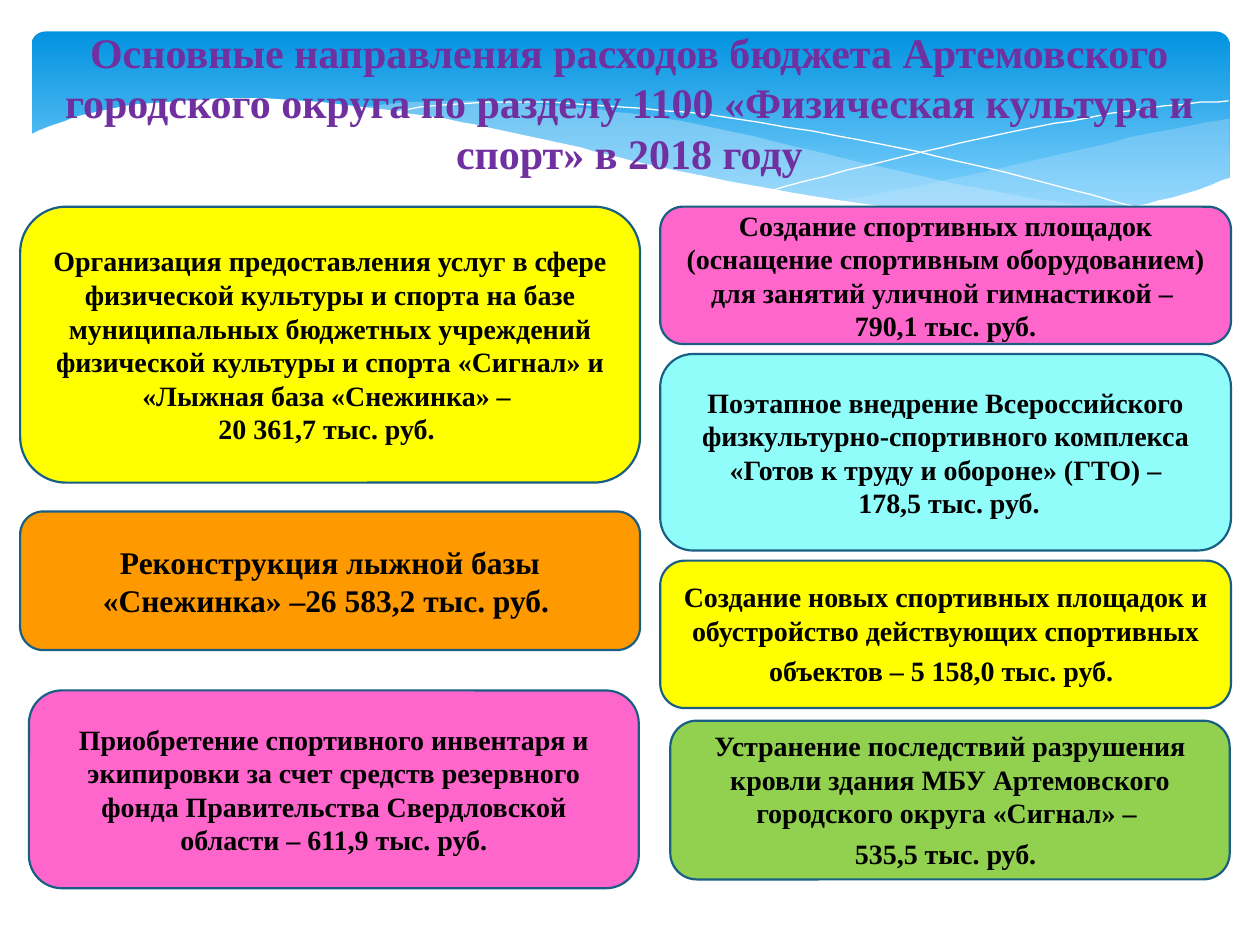
from dataclasses import dataclass

from lxml.etree import SubElement
from pptx import Presentation
from pptx.dml.color import RGBColor
from pptx.enum.shapes import MSO_SHAPE
from pptx.enum.text import MSO_ANCHOR, MSO_AUTO_SIZE, PP_ALIGN
from pptx.oxml.ns import qn
from pptx.util import Cm, Pt

FONT = "Times New Roman"
CM_PER_INCH = 2.54
Point = tuple[float, float]


@dataclass
class Wave:
    """A curved figure; its edges are knots in hundredths of an inch."""
    edges: list[list[Point]]
    fill: str = ""
    opacity: int = 100


@dataclass
class Box:
    left: float
    top: float
    width: float
    height: float
    fill: str
    lines: list[str]
    size: int = 16
    tail_size: int = 0  # size of a closing space, where it sets the line height


WAVES = [
    Wave([[(976, 94), (948, 99), (906, 107), (861, 118), (779, 137), (706, 152), (661, 160)],
          [(661, 160), (705, 165), (757, 170), (803, 172), (854, 170), (897, 165),
           (935, 156), (976, 141)]], "C6E7FC", 29),
    Wave([[(893, 167), (837, 160), (775, 149), (706, 134), (629, 116), (569, 102), (514, 92),
           (465, 86), (420, 82), (361, 80), (313, 82), (286, 86)],
          [(286, 86), (342, 94), (404, 106), (491, 126), (566, 143), (634, 156), (695, 165),
           (748, 170), (796, 173), (848, 172), (893, 167)]], "C6E7FC", 40),
    Wave([[(309, 90), (344, 84), (401, 81), (450, 82), (510, 86), (582, 94), (665, 108),
           (727, 120), (795, 136), (868, 155), (907, 166)]]),
    Wave([[(613, 151), (672, 135), (748, 117), (806, 104), (866, 93), (924, 84), (975, 80)]]),
    Wave([[(977, 141), (940, 154), (899, 164), (850, 170), (793, 171), (726, 167), (647, 156),
           (579, 144), (503, 128), (447, 114), (391, 102), (339, 92), (271, 83), (211, 78),
           (161, 79), (106, 83), (67, 91), (40, 100), (23, 107)],
          [(23, 224), (977, 224)]], "FFFFFF"),
]

PINK, YELLOW = "FF66CC", "FFFF00"
LEFT, LEFT_WIDTH = 0.16, 4.92
RIGHT, RIGHT_WIDTH = 5.24, 4.53
BOXES = [
    Box(LEFT, 1.64, LEFT_WIDTH, 2.19, YELLOW,
        ["Организация предоставления услуг в сфере физической культуры и спорта на базе "
         "муниципальных бюджетных учреждений физической культуры и спорта «Сигнал» и "
         "«Лыжная база «Снежинка» – ", "20 361,7 тыс. руб. "]),
    Box(LEFT, 4.06, LEFT_WIDTH, 1.1, "FF9900",
        ["Реконструкция лыжной базы «Снежинка» –26 583,2 тыс. руб. "], size=18),
    Box(RIGHT, 1.64, RIGHT_WIDTH, 1.09, PINK,
        ["Создание спортивных площадок (оснащение спортивным оборудованием) для занятий "
         "уличной гимнастикой – ", "790,1 тыс. руб."]),
    Box(RIGHT, 2.81, RIGHT_WIDTH, 1.56, "91FDFA",
        ["Поэтапное внедрение Всероссийского физкультурно-спортивного комплекса "
         "«Готов к труду и обороне» (ГТО) –", " 178,5 тыс. руб."]),
    Box(RIGHT, 4.45, RIGHT_WIDTH, 1.17, YELLOW,
        ["Создание новых спортивных площадок и обустройство действующих спортивных "
         "объектов – 5 158,0 тыс. руб."], tail_size=20),
    Box(0.23, 5.48, 4.84, 1.57, PINK,
        ["Приобретение спортивного инвентаря и экипировки за счет средств резервного фонда "
         "Правительства Свердловской области – 611,9 тыс. руб."]),
    Box(5.32, 5.72, 4.44, 1.26, "92D050",
        ["Устранение последствий разрушения кровли здания МБУ Артемовского городского "
         "округа «Сигнал» – ", "535,5 тыс. руб."], tail_size=20),
]


def color(value: str) -> RGBColor:
    return RGBColor.from_string(value)


def place(*inches: float) -> list[Cm]:
    return [Cm(value * CM_PER_INCH) for value in inches]


def smooth(knots: list[Point], steps: int = 4) -> list[Point]:
    """Catmull-Rom curve through the knots; two knots stay a straight edge."""
    if len(knots) < 3:
        return knots
    padded = [knots[0], *knots, knots[-1]]
    curve = [knots[0]]
    for a, b, c, d in zip(padded, padded[1:], padded[2:], padded[3:]):
        for step in range(1, steps + 1):
            t = step / steps
            x, y = (
                (2 * q + (r - p) * t + (2 * p - 5 * q + 4 * r - s) * t**2
                 + (3 * q - p - 3 * r + s) * t**3) / 2
                for p, q, r, s in zip(a, b, c, d))
            curve.append((x, y))
    return curve


def style_paragraph(paragraph, size: int, hex_color: str) -> None:
    paragraph.alignment = PP_ALIGN.CENTER
    font = paragraph.font
    font.name, font.size, font.bold = FONT, Pt(size), True
    font.color.rgb = color(hex_color)


def add_wave(slide, wave: Wave) -> None:
    points = [point for edge in wave.edges for point in smooth(edge)]
    builder = slide.shapes.build_freeform(*points[0], scale=Cm(CM_PER_INCH / 100))
    builder.add_line_segments(points[1:], close=bool(wave.fill))
    shape = builder.convert_to_shape()
    shape.shadow.inherit = False
    if not wave.fill:
        shape.fill.background()
        shape.line.color.rgb = color("FFFFFF")
        shape.line.width = Pt(0)
        return
    shape.line.fill.background()
    shape.fill.solid()
    shape.fill.fore_color.rgb = color(wave.fill)
    if wave.opacity < 100:
        color_element = shape._element.spPr.find(f".//{qn('a:srgbClr')}")
        SubElement(color_element, qn("a:alpha"), val=str(wave.opacity * 1000))


def add_banner(slide) -> None:
    banner = slide.shapes.add_shape(
        MSO_SHAPE.ROUNDED_RECTANGLE, *place(0.25, 0.25, 9.51, 1.56))
    banner.adjustments[0] = 0.07
    banner.shadow.inherit = False
    banner.line.fill.background()
    banner.fill.gradient()
    banner.fill.gradient_angle = 270
    stops = zip(banner.fill.gradient_stops, ("0293E0", "83D3FE"), (0, 0.9))
    for stop, hex_color, position in stops:
        stop.color.rgb = color(hex_color)
        stop.position = position


def add_title(slide, text: str) -> None:
    title = slide.shapes.title
    title.left, title.top, title.width, title.height = place(0.23, 0.16, 9.53, 1.31)
    frame = title.text_frame
    frame.text = text
    frame.word_wrap = True
    frame.auto_size = MSO_AUTO_SIZE.NONE
    frame.vertical_anchor = MSO_ANCHOR.TOP
    style_paragraph(frame.paragraphs[0], 24, "7030A0")
    # Bring the title in front of the banner
    slide.shapes._spTree.append(title._element)


def add_box(slide, box: Box) -> None:
    shape = slide.shapes.add_shape(
        MSO_SHAPE.ROUNDED_RECTANGLE, *place(box.left, box.top, box.width, box.height))
    shape.shadow.inherit = False
    shape.fill.solid()
    shape.fill.fore_color.rgb = color(box.fill)
    shape.line.color.rgb = color("195F84")
    shape.line.width = Pt(1.25)
    frame = shape.text_frame
    frame.word_wrap = True
    frame.vertical_anchor = MSO_ANCHOR.MIDDLE
    frame.text = "\n".join(box.lines)
    for paragraph in frame.paragraphs:
        style_paragraph(paragraph, box.size, "000000")
    if box.tail_size:
        tail = frame.paragraphs[-1].add_run()
        tail.text = " "
        tail.font.size = Pt(box.tail_size)


def main() -> None:
    presentation = Presentation()
    presentation.slide_width, presentation.slide_height = Cm(25.4), Cm(19.05)
    slide = presentation.slides.add_slide(presentation.slide_layouts[5])

    # Banner with waves
    add_banner(slide)
    for wave in WAVES:
        add_wave(slide, wave)

    # Title and spending items
    add_title(slide, "Основные направления расходов бюджета Артемовского городского округа "
                     "по разделу 1100 «Физическая культура и спорт» в 2018 году")
    for box in BOXES:
        add_box(slide, box)
    presentation.save("out.pptx")


if __name__ == "__main__":
    main()
